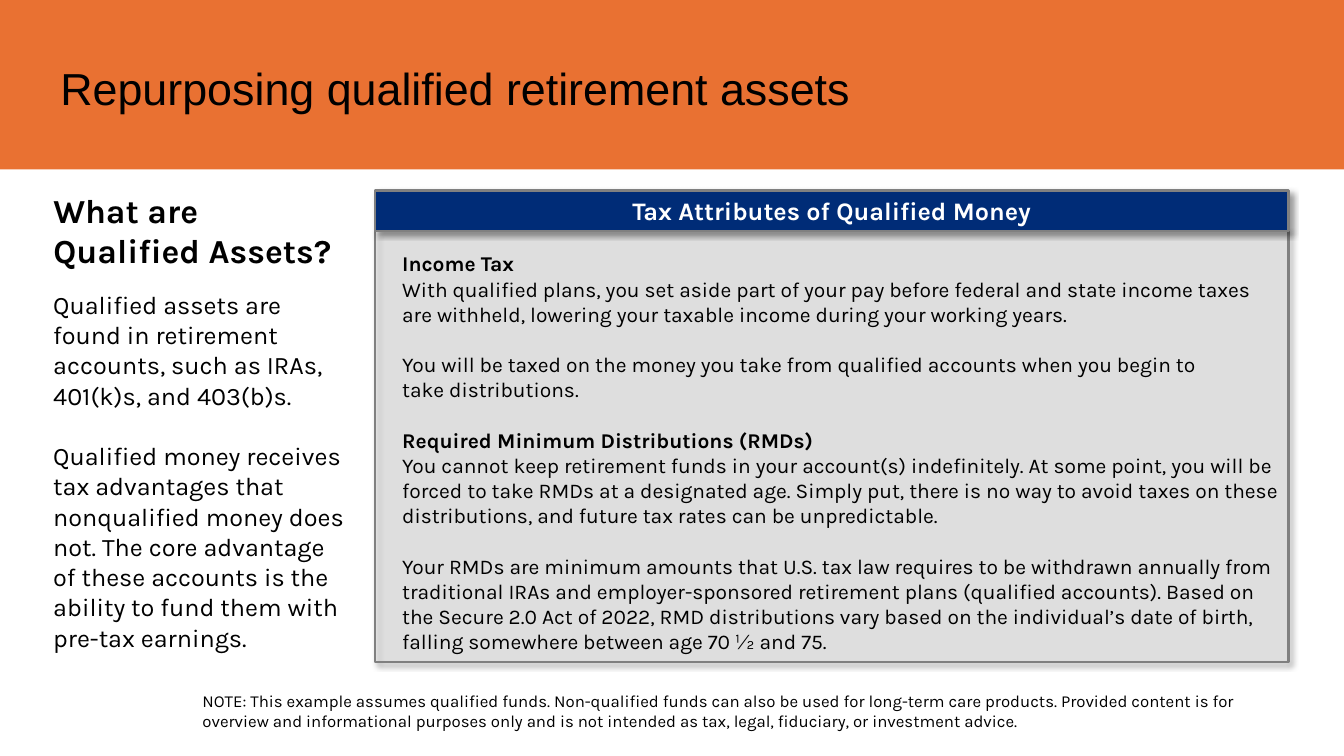
import pptx
import pptx.util
import pptx.dml.color
import pptx.enum.shapes
import pptx.enum.text
import pptx.oxml
from pptx.oxml.ns import nsdecls, qn

Inches, Pt = pptx.util.Inches, pptx.util.Pt
RGB = pptx.dml.color.RGBColor
Align, Anchor = pptx.enum.text.PP_ALIGN, pptx.enum.text.MSO_ANCHOR
Fit = pptx.enum.text.MSO_AUTO_SIZE

BLACK = RGB(0x00, 0x00, 0x00)
WHITE = RGB(0xFF, 0xFF, 0xFF)
ORANGE = RGB(0xE9, 0x71, 0x32)
NAVY = RGB(0x00, 0x2C, 0x77)
PALE = RGB(0xD9, 0xD9, 0xD9)
GRAY = RGB(0x80, 0x80, 0x80)

# Each paragraph is (text, bold, space before in points).
TITLE = [("Repurposing qualified retirement assets", False, 0)]
ASK = [("What are", True, 0), ("Qualified Assets?", True, 0)]
ANSWER = [
    ("Qualified assets are found in retirement accounts, such as IRAs, "
     "401(k)s, and 403(b)s.", False, 0),
    ("Qualified money receives tax advantages that nonqualified money does "
     "not. The core advantage of these accounts is the ability to fund them "
     "with pre-tax earnings.", False, 21.6),
]
HEADER = [("Tax Attributes of Qualified Money", True, 0)]
TAXES = [
    ("Income Tax", True, 0),
    ("With qualified plans, you set aside part of your pay before federal and "
     "state income taxes are withheld, lowering your taxable income during "
     "your working years.", False, 0),
    ("You will be taxed on the money you take from qualified accounts when "
     "you begin to\vtake distributions.", False, 18),
    ("Required Minimum Distributions (RMDs)", True, 18),
    ("You cannot keep retirement funds in your account(s) indefinitely. At "
     "some point, you will be forced to take RMDs at a designated age. Simply "
     "put, there is no way to avoid taxes on these distributions, and future "
     "tax rates can be unpredictable.", False, 0),
    ("Your RMDs are minimum amounts that U.S. tax law requires to be withdrawn "
     "annually from traditional IRAs and employer-sponsored retirement plans "
     "(qualified accounts). Based on the Secure 2.0 Act of 2022, RMD "
     "distributions vary based on the individual’s date of birth, falling "
     "somewhere between age 70 ½ and 75.", False, 18),
]
NOTE = [
    ("NOTE: This example assumes qualified funds. Non-qualified funds can also "
     "be used for long-term care products. Provided content is for overview and "
     "informational purposes only and is not intended as tax, legal, "
     "fiduciary, or investment advice.", False, 0),
]

WIDE, HIGH = 13.33, 7.5
LEFT = 0.43
PANEL_X, PANEL_W = 3.72, 9.06
HEAD_Y, HEAD_H = 1.89, 0.4
PANEL_Y = HEAD_Y + HEAD_H
PANEL_H = 4.28
TEXT_X = 3.89


def write(shape, paras, size, font="Karla", color=BLACK, align=Align.LEFT,
          anchor=Anchor.TOP, line=None, fit=Fit.SHAPE_TO_FIT_TEXT):
    frame = shape.text_frame
    frame.word_wrap = True
    frame.auto_size = fit
    frame.vertical_anchor = anchor
    for i, (text, bold, gap) in enumerate(paras):
        para = frame.add_paragraph() if i else frame.paragraphs[0]
        para.text = text
        para.alignment = align
        para.space_before = Pt(gap)
        if line:
            para.line_spacing = line
        for run in para.runs:
            run.font.name = font
            run.font.size = Pt(size)
            run.font.bold = bold
            run.font.color.rgb = color


def add_text(slide, box, paras, size, **style):
    shape = slide.shapes.add_textbox(*map(Inches, box))
    write(shape, paras, size, **style)


def add_rect(slide, box, fill):
    rect = slide.shapes.add_shape(
        pptx.enum.shapes.MSO_SHAPE.RECTANGLE, *map(Inches, box))
    rect.shadow.inherit = False
    rect.fill.solid()
    rect.fill.fore_color.rgb = fill
    rect.line.fill.background()
    return rect


def add_card(slide, box, fill):
    """Add a rectangle with a gray edge and a soft shadow at lower right."""
    card = add_rect(slide, box, fill)
    card.line.color.rgb = GRAY
    card.line.width = Pt(1.5)
    effects = card._element.spPr.find(qn("a:effectLst"))
    effects.append(pptx.oxml.parse_xml(
        f'<a:outerShdw {nsdecls("a")} blurRad="{Pt(4)}" dist="{Pt(3)}" '
        'dir="2700000" algn="tl" rotWithShape="0"><a:srgbClr val="000000">'
        '<a:alpha val="40000"/></a:srgbClr></a:outerShdw>'))
    return card


def fade(shape, percent):
    """Set the opacity of a solid fill."""
    color = shape._element.spPr.find(qn("a:solidFill"))[0]
    color.append(pptx.oxml.parse_xml(
        f'<a:alpha {nsdecls("a")} val="{percent * 1000}"/>'))


def main():
    deck = pptx.Presentation()
    deck.slide_width, deck.slide_height = Inches(WIDE), Inches(HIGH)
    slide = deck.slides.add_slide(deck.slide_layouts[6])

    add_rect(slide, (0, 0, WIDE, 1.68), ORANGE)
    add_text(slide, (0.5, 0.32, 12.33, 1.16), TITLE, 32, font="Arial",
             anchor=Anchor.MIDDLE, line=0.9, fit=Fit.NONE)
    add_text(slide, (LEFT, 1.83, 5.25, 0.91), ASK, 24)
    add_text(slide, (LEFT, 2.82, 3.17, 3.74), ANSWER, 18)

    panel = add_card(slide, (PANEL_X, PANEL_Y, PANEL_W, PANEL_H), PALE)
    fade(panel, 30)
    add_text(slide, (TEXT_X, 2.44, PANEL_X + PANEL_W - TEXT_X, 4.14), TAXES, 15)
    head = add_card(slide, (PANEL_X, HEAD_Y, PANEL_W, HEAD_H), NAVY)
    write(head, HEADER, 18, color=WHITE, align=Align.CENTER)

    add_text(slide, (1.91, 6.8, 10.93, 0.5), NOTE, 12)
    deck.save("out.pptx")


if __name__ == "__main__":
    main()
